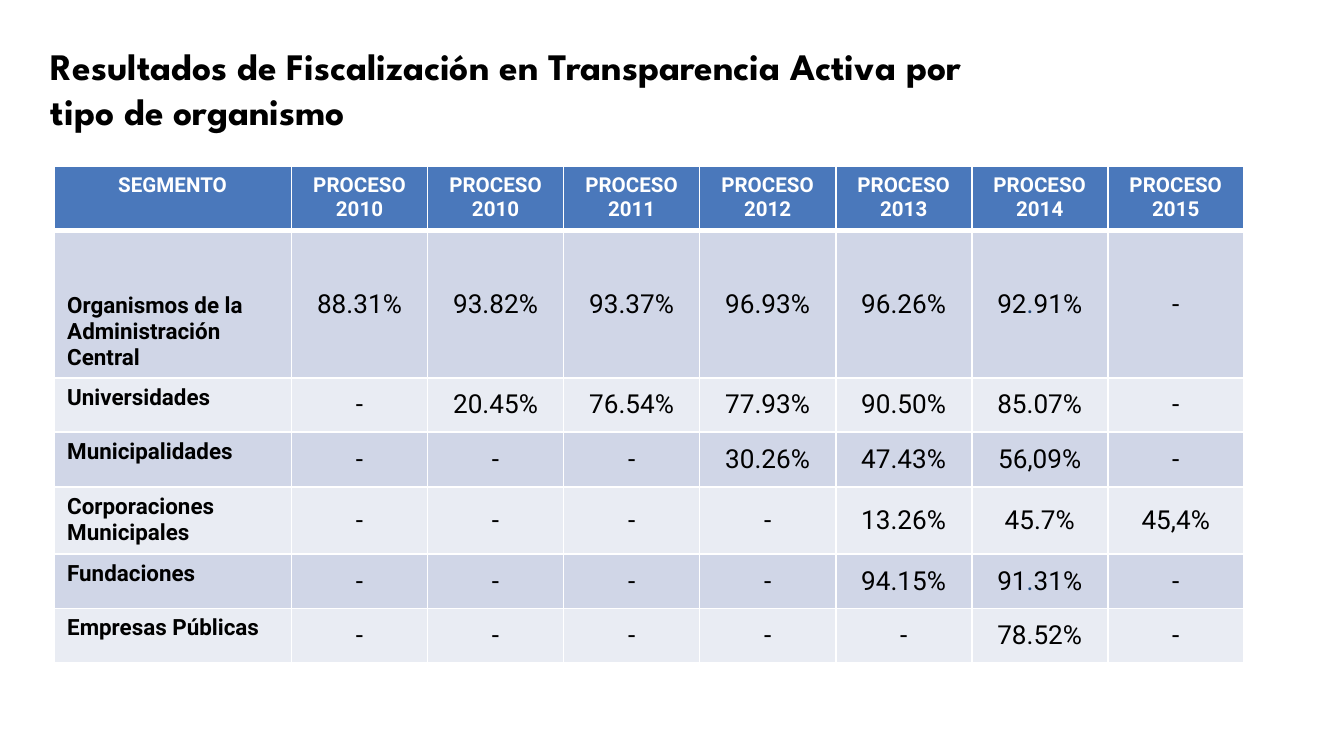
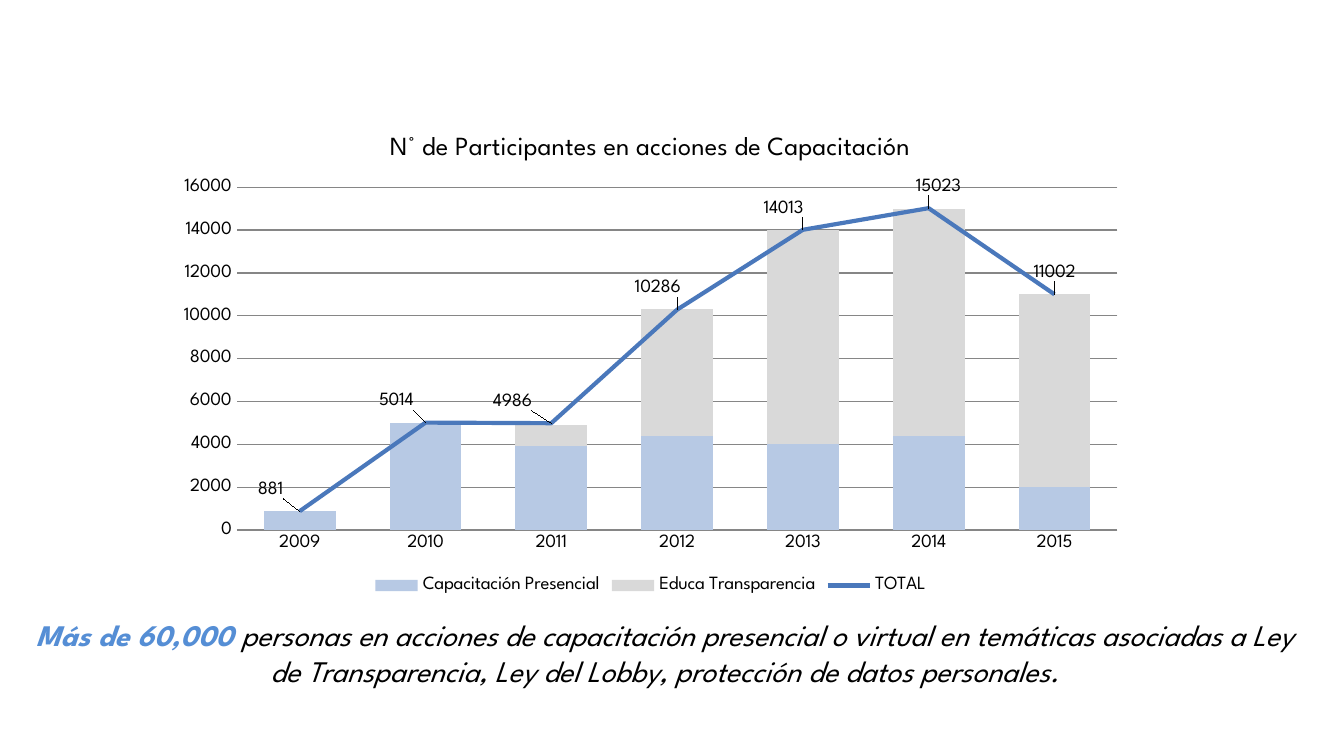
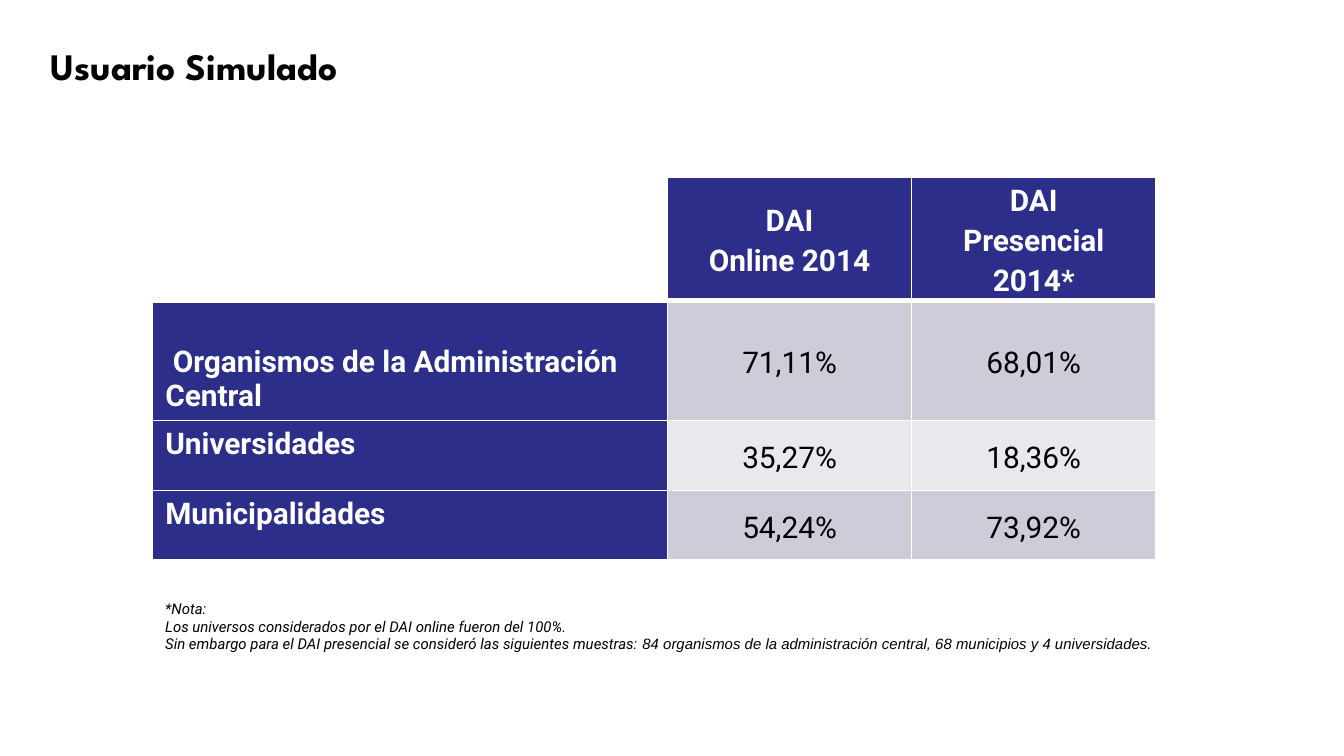
from dataclasses import dataclass
from typing import Any

from lxml import etree
from pptx import Presentation
from pptx.chart.data import CategoryChartData
from pptx.dml.color import RGBColor
from pptx.enum.chart import (XL_CHART_TYPE, XL_LABEL_POSITION, XL_LEGEND_POSITION,
                             XL_MARKER_STYLE, XL_TICK_MARK)
from pptx.enum.text import MSO_ANCHOR, MSO_AUTO_SIZE, PP_ALIGN
from pptx.oxml import parse_xml
from pptx.oxml.ns import nsdecls, qn
from pptx.util import Pt

# Shared look
BLACK = RGBColor(0, 0, 0)
WHITE = RGBColor(0xFF, 0xFF, 0xFF)
BLUE = RGBColor(0x4A, 0x78, 0xBB)
POINT_BLUE = RGBColor(0x1F, 0x49, 0x7D)
HIGHLIGHT = RGBColor(0x55, 0x8E, 0xD5)
PALE_BLUE = RGBColor(0xB7, 0xC9, 0xE4)
LIGHT_GRAY = RGBColor(0xD9, 0xD9, 0xD9)
GRID_GRAY = RGBColor(0x86, 0x86, 0x86)
NAVY = RGBColor(0x2D, 0x2D, 0x8A)
BLUE_BANDS = (RGBColor(0xD0, 0xD6, 0xE7), RGBColor(0xE9, 0xEC, 0xF3))
NAVY_BANDS = (RGBColor(0xCD, 0xCD, 0xDA), RGBColor(0xE8, 0xE8, 0xED))
SPARTAN, ROBOTO, ARIAL = "League Spartan", "Roboto", "Arial"
LEFT, CENTER = PP_ALIGN.LEFT, PP_ALIGN.CENTER
TOP, MIDDLE, BOTTOM = MSO_ANCHOR.TOP, MSO_ANCHOR.MIDDLE, MSO_ANCHOR.BOTTOM
STACKED_COLUMNS = XL_CHART_TYPE.COLUMN_STACKED
LABEL_ABOVE = XL_LABEL_POSITION.ABOVE
LEGEND_BOTTOM = XL_LEGEND_POSITION.BOTTOM
NO_MARKER = XL_MARKER_STYLE.NONE
NO_TICK = XL_TICK_MARK.NONE
NO_AUTO_SIZE = MSO_AUTO_SIZE.NONE
TITLE_ONLY, BLANK = 5, 6
THIN, THICK = 1, 3


@dataclass(frozen=True)
class Frame:
    left: float
    top: float
    width: float
    height: float

    def lengths(self) -> list[Pt]:
        return [Pt(self.left), Pt(self.top), Pt(self.width), Pt(self.height)]


@dataclass(frozen=True)
class TextRun:
    text: str
    size: float
    color: RGBColor = BLACK
    bold: bool = False
    italic: bool = False
    font: str = ROBOTO


Lines = list[list[TextRun]]


@dataclass(frozen=True)
class CellStyle:
    fill: RGBColor
    align: Any = CENTER
    anchor: Any = MIDDLE
    spacing: float = 1.0
    margins: tuple[float, float] = (7.2, 3.6)
    indent: float = 0


@dataclass(frozen=True)
class ChartSeries:
    name: str
    values: tuple
    color: RGBColor


# Text and titles
def write(text_frame: Any, lines: Lines, align: Any = LEFT, spacing: float = 1.0) -> None:
    for index, line in enumerate(lines):
        para = text_frame.paragraphs[0] if index == 0 else text_frame.add_paragraph()
        para.alignment = align
        para.line_spacing = spacing
        for item in line:
            span = para.add_run()
            span.text = item.text
            font = span.font
            font.name, font.size = item.font, Pt(item.size)
            font.bold, font.italic = item.bold, item.italic
            font.color.rgb = item.color


def add_titled_page(deck: Any, title: str, height: float) -> Any:
    page = deck.slides.add_slide(deck.slide_layouts[TITLE_ONLY])
    box = page.shapes.title
    box.left, box.top, box.width, box.height = Frame(20, 19.5, 527, height).lengths()
    box.text_frame.vertical_anchor = TOP
    box.text_frame.word_wrap = True
    box.text_frame.auto_size = NO_AUTO_SIZE
    write(box.text_frame, [[TextRun(title, 20, bold=True, font=SPARTAN)]])
    return page


def add_text(page: Any, frame: Frame, lines: Lines, align: Any = LEFT) -> None:
    box = page.shapes.add_textbox(*frame.lengths())
    box.text_frame.word_wrap = True
    write(box.text_frame, lines, align)


# Tables
def add_grid(page: Any, left: float, top: float, widths: list[float],
             heights: list[float]) -> Any:
    frame = Frame(left, top, sum(widths), sum(heights))
    table = page.shapes.add_table(len(heights), len(widths), *frame.lengths()).table
    table.first_row = table.horz_banding = False
    for column, width in zip(table.columns, widths):
        column.width = Pt(width)
    for row, height in zip(table.rows, heights):
        row.height = Pt(height)
    return table


def fill_cell(table: Any, row: int, column: int, lines: Lines, style: CellStyle) -> None:
    cell = table.cell(row, column)
    cell.fill.solid()
    cell.fill.fore_color.rgb = style.fill
    cell.vertical_anchor = style.anchor
    side, edge = style.margins
    cell.margin_left = cell.margin_right = Pt(side)
    cell.margin_top = cell.margin_bottom = Pt(edge)
    write(cell.text_frame, lines, style.align, style.spacing)
    if style.indent:
        para = cell.text_frame.paragraphs[0]
        para._p.get_or_add_pPr().set("indent", str(Pt(style.indent)))
    # White rules, thicker under the header
    widths = {"lnL": THIN, "lnR": THIN, "lnT": THICK if row == 1 else THIN,
              "lnB": THICK if row == 0 else THIN}
    properties = cell._tc.get_or_add_tcPr()
    for index, (tag, width) in enumerate(widths.items()):
        properties.insert(index, parse_xml(
            f'<a:{tag} {nsdecls("a")} w="{Pt(width)}"><a:solidFill>'
            f'<a:srgbClr val="{WHITE}"/></a:solidFill></a:{tag}>'))


# Slide 1: results by type of body
PROCESS_YEARS = (2010, 2010, 2011, 2012, 2013, 2014, 2015)
RESULTS = (
    ("Organismos de la Administración Central",
     "88.31%", "93.82%", "93.37%", "96.93%", "96.26%", "92.91%", "-"),
    ("Universidades", "-", "20.45%", "76.54%", "77.93%", "90.50%", "85.07%", "-"),
    ("Municipalidades", "-", "-", "-", "30.26%", "47.43%", "56,09%", "-"),
    ("Corporaciones Municipales", "-", "-", "-", "-", "13.26%", "45.7%", "45,4%"),
    ("Fundaciones", "-", "-", "-", "-", "94.15%", "91.31%", "-"),
    ("Empresas Públicas", "-", "-", "-", "-", "-", "78.52%", "-"),
)
BLUE_POINT_VALUES = ("92.91%", "91.31%")


def value_runs(value: str) -> list[TextRun]:
    if value not in BLUE_POINT_VALUES:
        return [TextRun(value, 14)]
    whole, point, decimals = value.partition(".")
    return [TextRun(whole, 14), TextRun(point, 14, POINT_BLUE), TextRun(decimals, 14)]


def add_results_page(deck: Any) -> None:
    page = add_titled_page(
        deck, "Resultados de Fiscalización en Transparencia Activa por tipo de organismo", 55.5)
    table = add_grid(page, 28.8, 89.3, [127.4] + [72.9] * len(PROCESS_YEARS),
                     [34.3, 78.8, 29.2, 29.2, 36, 29.2, 29.2])
    headings = ["SEGMENTO"] + [f"PROCESO {year}" for year in PROCESS_YEARS]
    for column, heading in enumerate(headings):
        fill_cell(table, 0, column, [[TextRun(heading, 11, WHITE, bold=True)]],
                  CellStyle(BLUE, anchor=TOP))
    for row, (segment, *values) in enumerate(RESULTS, start=1):
        band = BLUE_BANDS[(row - 1) % 2]
        fill_cell(table, row, 0, [[TextRun(segment, 12, bold=True)]],
                  CellStyle(band, LEFT, BOTTOM if row == 1 else TOP))
        for column, value in enumerate(values, start=1):
            fill_cell(table, row, column, [value_runs(value)], CellStyle(band))


# Slide 2: training participants
YEARS = [str(year) for year in range(2009, 2016)]
SERIES = (
    ChartSeries("Capacitación Presencial", (900, 5000, 3900, 4400, 4000, 4400, 2000), PALE_BLUE),
    ChartSeries("Educa Transparencia", (None, None, 1000, 5900, 10000, 10600, 9000), LIGHT_GRAY),
    ChartSeries("TOTAL", (881, 5014, 4986, 10286, 14013, 15023, 11002), BLUE),
)
LABEL_SHIFTS = (-0.03, -0.03, -0.04, -0.02, -0.02, 0.01, 0)
LABEL_RISE = -0.015


def manual_layout(**parts: Any) -> Any:
    layout = etree.Element(qn("c:layout"))
    manual = etree.SubElement(layout, qn("c:manualLayout"))
    for tag, value in parts.items():
        etree.SubElement(manual, qn(f"c:{tag}")).set("val", str(value))
    return layout


def move_last_series_to_line(chart: Any) -> None:
    bars = chart.plots[0]._element
    total = bars.findall(qn("c:ser"))[-1]
    for bar_setting in total.findall(qn("c:invertIfNegative")):
        total.remove(bar_setting)
    lines = parse_xml(f'<c:lineChart {nsdecls("c")}><c:grouping val="standard"/>'
                      '<c:varyColors val="0"/><c:marker val="1"/></c:lineChart>')
    lines.insert(2, total)
    for axis in bars.findall(qn("c:axId")):
        etree.SubElement(lines, qn("c:axId")).set("val", axis.get("val"))
    bars.addnext(lines)


def style_axes(chart: Any) -> None:
    categories, values = chart.category_axis, chart.value_axis
    for axis in (categories, values):
        axis.major_tick_mark = axis.minor_tick_mark = NO_TICK
    categories.format.line.color.rgb = GRID_GRAY
    values.format.line.fill.background()
    values.minimum_scale, values.maximum_scale, values.major_unit = 0, 16000, 2000
    values.has_major_gridlines = True
    values.major_gridlines.format.line.color.rgb = GRID_GRAY
    values.major_gridlines.format.line.width = Pt(0.75)


def style_total(total: Any) -> None:
    total.smooth = False
    total.marker.style = NO_MARKER
    total.format.line.color.rgb = BLUE
    total.format.line.width = Pt(2.25)
    for index in range(len(YEARS)):
        total.points[index].data_label.position = LABEL_ABOVE
    labels = total._element.findall(f'{qn("c:dLbls")}/{qn("c:dLbl")}')
    for label, shift in zip(labels, LABEL_SHIFTS):
        label.insert(1, manual_layout(x=shift, y=LABEL_RISE))


def add_participants_page(deck: Any) -> None:
    page = deck.slides.add_slide(deck.slide_layouts[BLANK])
    data = CategoryChartData(number_format="General")
    data.categories = YEARS
    for item in SERIES:
        data.add_series(item.name, item.values)
    frame = Frame(87.8, 60.5, 521.3, 260.6)
    chart = page.shapes.add_chart(STACKED_COLUMNS, *frame.lengths(), data).chart
    chart.font.name, chart.font.size = SPARTAN, Pt(10)
    chart.font.color.rgb = BLACK
    chart.has_title = True
    write(chart.chart_title.text_frame,
          [[TextRun("N° de Participantes en acciones de Capacitación", 14, font=SPARTAN)]], CENTER)
    chart.has_legend = True
    chart.legend.position = LEGEND_BOTTOM
    chart.legend.include_in_layout = False

    # Stacked columns with the total as a line
    move_last_series_to_line(chart)
    columns, lines = chart.plots
    columns.gap_width, columns.overlap = 75, 100
    columns.vary_by_categories = False
    for series, item in zip(columns.series, SERIES):
        series.format.fill.solid()
        series.format.fill.fore_color.rgb = item.color
    style_total(lines.series[0])
    style_axes(chart)
    plot_area = columns._element.getparent()
    for old_layout in plot_area.findall(qn("c:layout")):
        plot_area.remove(old_layout)
    plot_area.insert(0, manual_layout(layoutTarget="inner", xMode="edge", yMode="edge",
                                      x=0.075, y=0.153, w=0.905, h=0.705))

    add_text(page, Frame(7.2, 326.9, 698.4, 46), [[
        TextRun("Más de 60,000 ", 16, HIGHLIGHT, True, True, SPARTAN),
        TextRun("personas en acciones de capacitación presencial o virtual en temáticas "
                "asociadas a Ley de Transparencia, Ley del Lobby, protección de datos "
                "personales.", 16, italic=True, font=SPARTAN)]], CENTER)


# Slide 3: simulated user
REQUEST_HEADINGS = (("DAI", "Online 2014"), ("DAI", "Presencial 2014*"))
REQUEST_RESULTS = (
    ("Organismos de la Administración Central", "71,11%", "68,01%"),
    ("Universidades", "35,27%", "18,36%"),
    ("Municipalidades", "54,24%", "73,92%"),
)
TIGHT = (5, 0)


def add_simulated_user_page(deck: Any) -> None:
    page = add_titled_page(deck, "Usuario Simulado", 31.5)
    table = add_grid(page, 81.4, 95.2, [276.2, 130.8, 130.8], [65.6, 64.6, 37.5, 37.2])
    fill_cell(table, 0, 0, [], CellStyle(WHITE))
    for column, heading in enumerate(REQUEST_HEADINGS, start=1):
        fill_cell(table, 0, column, [[TextRun(line, 16, WHITE, bold=True)] for line in heading],
                  CellStyle(NAVY, spacing=1.15, margins=TIGHT))
    for row, (segment, *values) in enumerate(REQUEST_RESULTS, start=1):
        first = row == 1
        fill_cell(table, row, 0, [[TextRun(segment, 16, WHITE, bold=True)]],
                  CellStyle(NAVY, LEFT, BOTTOM if first else TOP, indent=4 if first else 0))
        for column, value in enumerate(values, start=1):
            fill_cell(table, row, column, [[TextRun(value, 16)]],
                      CellStyle(NAVY_BANDS[(row - 1) % 2], spacing=1.15, margins=TIGHT))

    add_text(page, Frame(81.4, 317.5, 546.5, 46), [
        [TextRun("*Nota:", 8, italic=True)],
        [TextRun("Los universos considerados por el DAI online fueron del 100%.", 8, italic=True)],
        [TextRun("Sin embargo para el DAI presencial se consideró las siguientes muestras: ",
                 8, italic=True),
         TextRun("84 organismos de la administración central, 68 municipios y 4 universidades.",
                 8, italic=True, font=ARIAL)]])


def main() -> None:
    deck = Presentation()
    deck.slide_width, deck.slide_height = Pt(720), Pt(405)
    add_results_page(deck)
    add_participants_page(deck)
    add_simulated_user_page(deck)
    deck.save("out.pptx")


if __name__ == "__main__":
    main()
